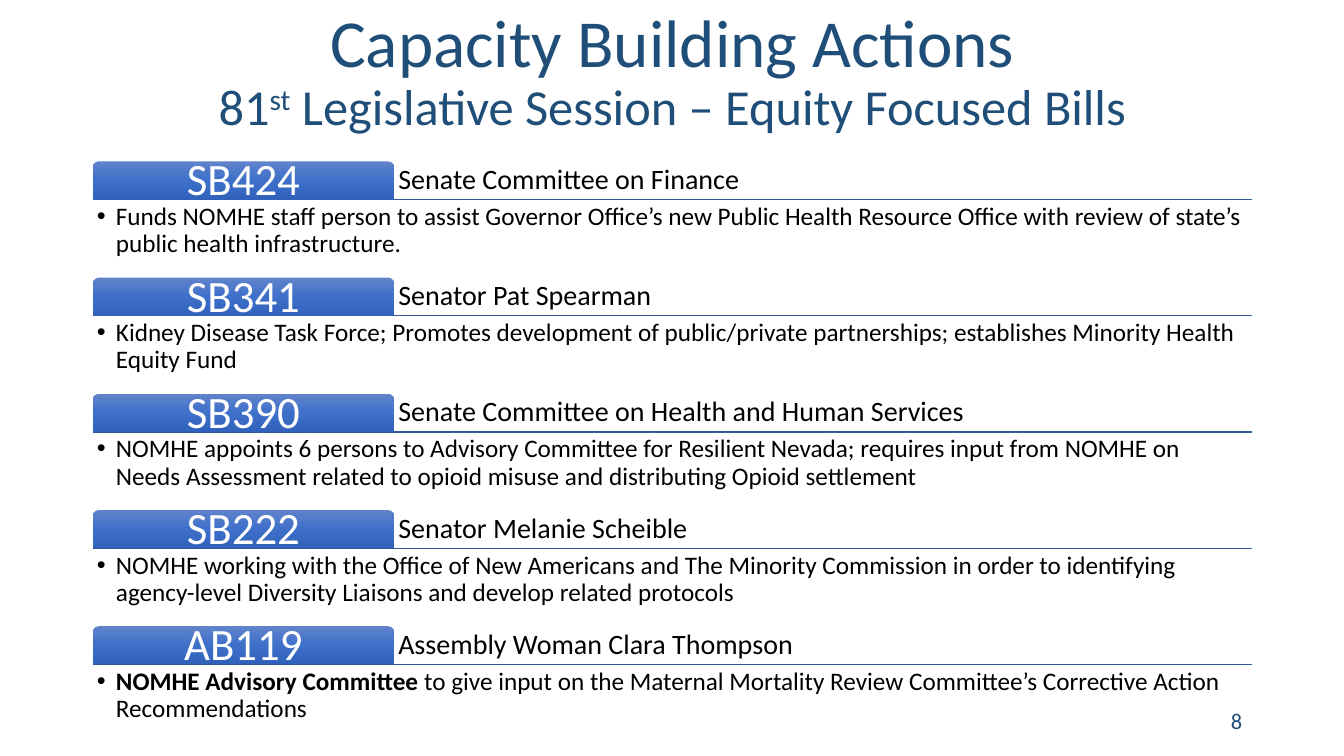
import pptx
import copy
import pptx.util
import pptx.dml.color
import pptx.enum.shapes
import pptx.enum.text
import pptx.oxml.ns
from lxml import etree

Inches, Pt = pptx.util.Inches, pptx.util.Pt
RGBColor = pptx.dml.color.RGBColor
MSO_SHAPE = pptx.enum.shapes.MSO_SHAPE
ALIGN = pptx.enum.text.PP_ALIGN
ANCHOR = pptx.enum.text.MSO_ANCHOR
qn = pptx.oxml.ns.qn

NAVY = RGBColor(0x1F, 0x4E, 0x79)
BLACK = RGBColor(0x00, 0x00, 0x00)
WHITE = RGBColor(0xFF, 0xFF, 0xFF)
RULE_BLUE = RGBColor(0x36, 0x5B, 0x9D)
TAB_BLUES = [RGBColor(0x61, 0x83, 0xCB), RGBColor(0x3E, 0x70, 0xCA),
             RGBColor(0x30, 0x62, 0xBB)]
FONT = "Calibri"

# Bill number, sponsor, bold opening, description
BILLS = [
    ("SB424", "Senate Committee on Finance", "",
     "Funds NOMHE staff person to assist Governor Office’s new Public Health "
     "Resource Office with review of state’s public health infrastructure."),
    ("SB341", "Senator Pat Spearman", "",
     "Kidney Disease Task Force; Promotes development of public/private "
     "partnerships; establishes Minority Health Equity Fund"),
    ("SB390", "Senate Committee on Health and Human Services", "",
     "NOMHE appoints 6 persons to Advisory Committee for Resilient Nevada; "
     "requires input from NOMHE on Needs Assessment related to opioid misuse "
     "and distributing Opioid settlement"),
    ("SB222", "Senator Melanie Scheible", "",
     "NOMHE working with the Office of New Americans and The Minority "
     "Commission in order to identifying agency-level Diversity Liaisons and "
     "develop related protocols"),
    ("AB119", "Assembly Woman Clara Thompson", "NOMHE Advisory Committee ",
     "to give input on the Maternal Mortality Review Committee’s Corrective "
     "Action Recommendations"),
]


def add_run(p, text, size=18, color=BLACK, bold=False, superscript=False):
    r = p.add_run()
    r.text = text
    r.font.name, r.font.size, r.font.bold = FONT, Pt(size), bold
    r.font.color.rgb = color
    if superscript:
        r._r.get_or_add_rPr().set("baseline", "30000")


def set_frame(tf, anchor, inset=0.04, align=ALIGN.LEFT, spacing=0.9):
    tf.word_wrap = True
    tf.auto_size = pptx.enum.text.MSO_AUTO_SIZE.NONE
    tf.vertical_anchor = anchor
    tf.margin_left = tf.margin_right = Inches(inset)
    tf.margin_top = tf.margin_bottom = Inches(inset)
    p = tf.paragraphs[0]
    p.alignment, p.line_spacing = align, spacing
    return p


def add_text_box(s, x, y, w, h, anchor, **frame):
    box = s.shapes.add_textbox(Inches(x), Inches(y), Inches(w), Inches(h))
    return set_frame(box.text_frame, anchor, **frame)


def add_bullet(p, indent):
    pPr = p._p.get_or_add_pPr()
    pPr.set("marL", str(Inches(indent)))
    pPr.set("indent", str(-Inches(indent)))
    etree.SubElement(pPr, qn("a:buFont")).set("typeface", "Arial")
    etree.SubElement(pPr, qn("a:buChar")).set("char", "•")


def fill_gradient(sp, colors):
    sp.fill.gradient()
    sp.fill.gradient_angle = 270
    stops = sp._element.spPr.find(qn("a:gradFill")).find(qn("a:gsLst"))
    stops.insert(1, copy.deepcopy(stops[0]))
    for i, (stop, color) in enumerate(zip(sp.fill.gradient_stops, colors)):
        stop.color.rgb = color
        stop.position = i / (len(colors) - 1)


def add_title(s, x, y, w, h):
    title = s.shapes.title
    title.left, title.top = Inches(x), Inches(y)
    title.width, title.height = Inches(w), Inches(h)
    p = set_frame(title.text_frame, ANCHOR.MIDDLE, inset=0.05, align=ALIGN.CENTER)
    add_run(p, "Capacity Building Actions", size=48, color=NAVY)
    p.add_line_break()
    add_run(p, "81", size=36, color=NAVY)
    add_run(p, "st", size=36, color=NAVY, superscript=True)
    add_run(p, " Legislative Session – Equity Focused Bills", size=36, color=NAVY)


def add_bill(s, x, y, w, bill, tab_w=2.99, tab_h=0.38, body_h=0.76):
    number, sponsor, lead, description = bill
    base = y + tab_h

    # Rule under the heading
    rule = s.shapes.add_connector(pptx.enum.shapes.MSO_CONNECTOR.STRAIGHT,
                                  Inches(x), Inches(base), Inches(x + w), Inches(base))
    rule.line.color.rgb = RULE_BLUE
    rule.line.width = Pt(1)
    etree.SubElement(rule._element.spPr, qn("a:effectLst"))

    # Sponsor
    p = add_text_box(s, x + tab_w, y, w - tab_w, tab_h, ANCHOR.BOTTOM)
    add_run(p, sponsor, size=20)

    # Tab with the bill number
    tab = s.shapes.add_shape(MSO_SHAPE.ROUND_2_SAME_RECTANGLE,
                             Inches(x), Inches(y), Inches(tab_w), Inches(tab_h))
    tab.shadow.inherit = False
    fill_gradient(tab, TAB_BLUES)
    tab.line.fill.background()
    p = set_frame(tab.text_frame, ANCHOR.MIDDLE, inset=0.07, align=ALIGN.CENTER)
    add_run(p, number, size=32, color=WHITE)

    # Description
    p = add_text_box(s, x, base, w, body_h, ANCHOR.TOP)
    add_bullet(p, 0.19)
    if lead:
        add_run(p, lead, bold=True)
    add_run(p, description)


def add_bill_list(s, x, y, w, pitch):
    for i, bill in enumerate(BILLS):
        add_bill(s, x, y + i * pitch, w, bill)


def add_page_number(s, x, y, w, h):
    p = add_text_box(s, x, y, w, h, ANCHOR.MIDDLE, inset=0.1,
                     align=ALIGN.RIGHT, spacing=1.0)
    add_run(p, "8", size=16, color=NAVY)


def main():
    prs = pptx.Presentation()
    prs.slide_width, prs.slide_height = Inches(13.33), Inches(7.5)
    s = prs.slides.add_slide(prs.slide_layouts[5])
    left, width = 0.92, 11.5
    add_title(s, left, 0, width, 1.45)
    add_page_number(s, left + width - 3, 6.95, 3, 0.4)
    add_bill_list(s, left, 1.6, width, pitch=1.153)
    prs.save("out.pptx")


if __name__ == "__main__":
    main()
